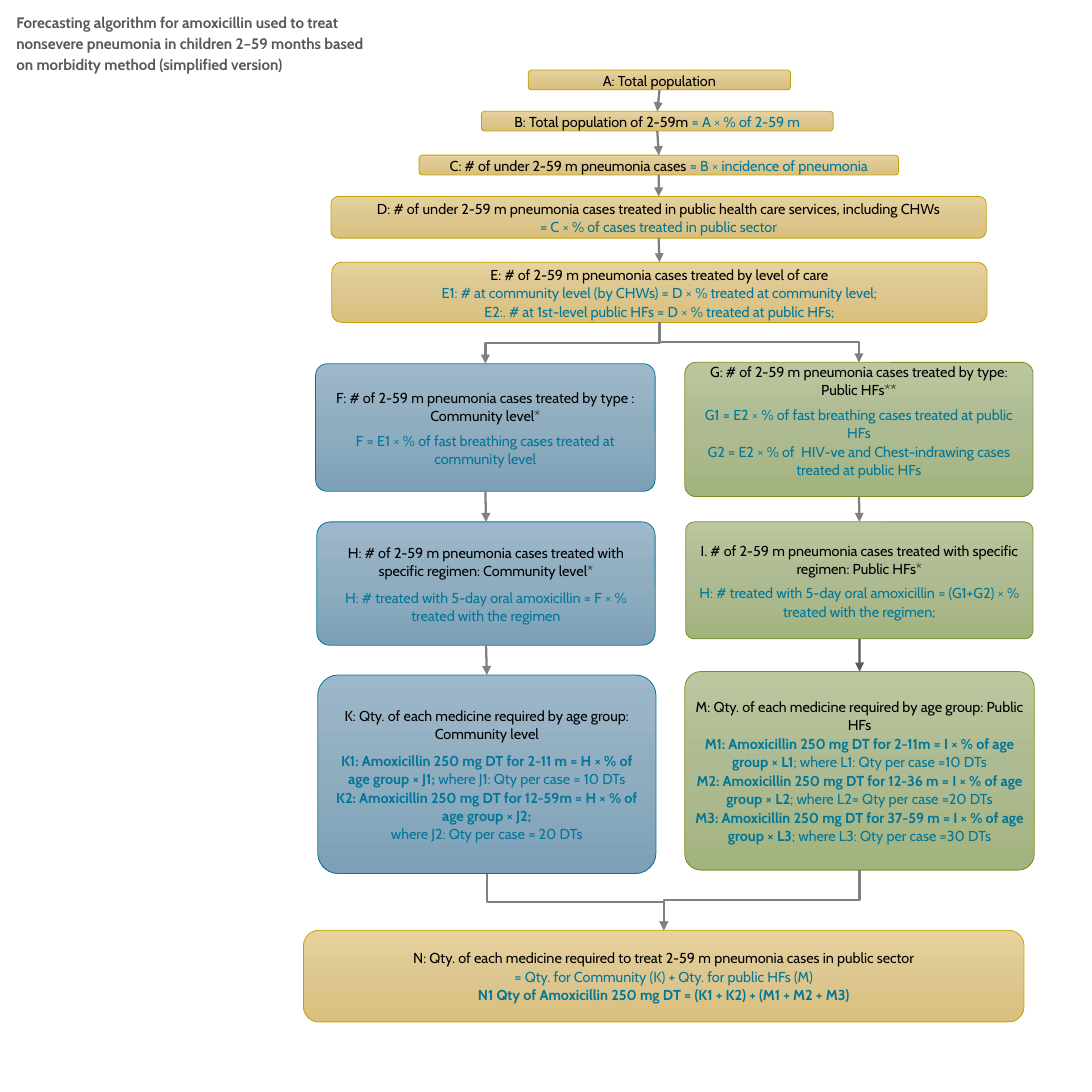
from copy import deepcopy
from lxml.etree import SubElement
from pptx import Presentation
from pptx.dml.color import RGBColor
from pptx.enum.shapes import MSO_CONNECTOR, MSO_SHAPE
from pptx.enum.text import MSO_ANCHOR, PP_ALIGN
from pptx.oxml.ns import qn
from pptx.util import Cm, Pt

# Colours
HEX = {"gold": ("E7D19D", "DDC790", "DAC07C", "C2A204"),
       "blue": ("9DB8CA", "90ADC0", "7CA0B7", "007698"),
       "green": ("BAC69E", "AEBB92", "A3B37D", "788E1E"),
       "head": "000000", "calc": "007698", "bold": "007698",
       "title": "595959", "grey": "808080", "dark": "595959"}

# Formats
FONT = {"name": "Cabin", "size": Pt(9.5)}
FRAME = {"word_wrap": True, "vertical_anchor": MSO_ANCHOR.MIDDLE,
         "margin_left": Cm(0.13), "margin_right": Cm(0.13),
         "margin_top": 0, "margin_bottom": 0}
PARA = {"alignment": PP_ALIGN.CENTER, "line_spacing": 1.07}

TITLE = ("Forecasting algorithm for amoxicillin used to treat nonsevere pneumonia "
         "in children 2–59 months based on morbidity method (simplified version)")

# Boxes: colour, (left, top, width, height) in cm, corner, gap after heading in pt,
# room kept free at the bottom in cm, paragraphs of (style, text) runs
BOXES = {
    "A": ("gold", (12.29, 1.63, 6.1, 0.46), 0.167, 0, 0, [
        [("head", "A: Total population")]]),
    "B": ("gold", (11.2, 2.59, 8.18, 0.46), 0.167, 0, 0, [
        [("head", "B: Total population of 2-59m"), ("calc", " = A × % of 2-59 m")]]),
    "C": ("gold", (9.75, 3.61, 11.15, 0.46), 0.167, 0, 0, [
        [("head", "C: # of under 2-59 m pneumonia cases "),
         ("calc", "= B × incidence of pneumonia")]]),
    "D": ("gold", (7.7, 4.57, 15.24, 0.97), 0.167, 0, 0, [
        [("head", "D: # of under 2-59 m pneumonia cases treated in public "
                  "health care services, including CHWs")],
        [("calc", "= C × % of cases treated in public sector")]]),
    "E": ("gold", (7.72, 6.1, 15.24, 1.4), 0.167, 0, 0, [
        [("head", "E: # of 2-59 m pneumonia cases treated by level of care")],
        [("calc", "E1: # at community level (by CHWs) = D × % treated at community level;")],
        [("calc", "E2:. # at 1st-level public HFs = D × % treated at public HFs;")]]),
    "F": ("blue", (7.34, 8.46, 7.9, 2.97), 0.093, 3.9, 0, [
        [("head", "F: # of 2-59 m pneumonia cases treated by type : Community level*")],
        [("calc", "F = E1 × % of fast breathing cases treated at community level")]]),
    "G": ("green", (15.93, 8.43, 8.1, 3.12), 0.083, 3.9, 0.43, [
        [("head", "G: # of 2-59 m pneumonia cases treated by type: Public HFs**")],
        [("calc", "G1 = E2 × % of fast breathing cases treated at public HFs")],
        [("calc", "G2 = E2 × % of  HIV-ve and Chest-indrawing cases "
                  "treated at public HFs")]]),
    "H": ("blue", (7.37, 12.14, 7.87, 2.87), 0.107, 5.2, 0, [
        [("head", "H: # of 2-59 m pneumonia cases treated with specific regimen: "
                  "Community level*")],
        [("calc", "H: # treated with 5-day oral amoxicillin = F × % "
                  "treated with the regimen")]]),
    "I": ("green", (15.95, 12.14, 8.08, 2.72), 0.072, 3.9, 0, [
        [("head", "I. # of 2-59 m pneumonia cases treated with specific regimen: "
                  "Public HFs*")],
        [("calc", "H: # treated with 5-day oral amoxicillin = (G1+G2) × % "
                  "treated with the regimen;")]]),
    "K": ("blue", (7.39, 15.7, 7.87, 4.62), 0.104, 5.2, 0, [
        [("head", "K: Qty. of each medicine required by age group: Community level")],
        [("bold", "K1: Amoxicillin 250 mg DT for 2-11 m = H × % of age group × J1;"),
         ("calc", " where J1: Qty per case = 10 DTs")],
        [("bold", "K2: Amoxicillin 250 mg DT for 12-59m = H × % of age group × J2;")],
        [("calc", "where J2: Qty per case = 20 DTs")]]),
    "M": ("green", (15.93, 15.62, 8.13, 4.62), 0.082, 0, 0, [
        [("head", "M: Qty. of each medicine required by age group: Public HFs")],
        [("bold", "M1: Amoxicillin 250 mg DT for 2-11m = I × % of age group × L1"),
         ("calc", "; where L1: Qty per case =10 DTs")],
        [("bold", "M2: Amoxicillin 250 mg DT for 12-36 m = I × % of age group × L2"),
         ("calc", "; where L2= Qty per case =20 DTs")],
        [("bold", "M3: Amoxicillin 250 mg DT for 37-59 m = I × % of age group × L3"),
         ("calc", "; where L3: Qty per case =30 DTs")]]),
    "N": ("gold", (7.06, 21.64, 16.76, 2.13), 0.167, 0, 0, [
        [("head", "N: Qty. of each medicine required to treat 2-59 m "
                  "pneumonia cases in public sector")],
        [("calc", "= Qty. for Community (K) + Qty. for public HFs (M)")],
        [("bold", "N1 Qty of Amoxicillin 250 mg DT = (K1 + K2) + (M1 + M2 + M3)")]]),
}
STRAIGHT = ["AB", "BC", "CD", "DE", "FH", "GI", "HK", "IM"]
BENT = ["EF", "EG", "KN", "MN"]


def apply(item, form):
    for name, value in form.items():
        setattr(item, name, value)


def add_run(para, style, text):
    run = para.add_run()
    run.text = text
    apply(run.font, {**FONT, "bold": style in ("bold", "title")})
    run.font.color.rgb = RGBColor.from_string(HEX[style])
    return run


def add_box(shapes, tone, place, corner, gap, room, lines):
    box = shapes.add_shape(MSO_SHAPE.ROUNDED_RECTANGLE, *map(Cm, place))
    box.shadow.inherit = False
    box.adjustments[0] = corner
    # Three-stop gradient, top to bottom
    box.fill.gradient()
    box.fill.gradient_angle = 270
    stops = box._element.spPr.find(".//" + qn("a:gsLst"))
    stops.insert(1, deepcopy(stops[0]))
    *shades, edge = HEX[tone]
    for stop, shade, spot in zip(box.fill.gradient_stops, shades, (0, 0.5, 1)):
        stop.color.rgb = RGBColor.from_string(shade)
        stop.position = spot
    box.line.color.rgb = RGBColor.from_string(edge)
    box.line.width = Pt(0.5)
    # Text
    frame = box.text_frame
    apply(frame, {**FRAME, "margin_bottom": Cm(room)})
    for i, runs in enumerate(lines):
        para = frame.add_paragraph() if i else frame.paragraphs[0]
        apply(para, {**PARA, "space_after": Pt(0 if i else gap)})
        for style, text in runs:
            add_run(para, style, text)
    return box


def add_arrow(shapes, kind, tone):
    arrow = shapes.add_connector(kind, 0, 0, 0, 0)
    arrow.line.color.rgb = RGBColor.from_string(HEX[tone])
    arrow.line.width = Pt(1.5)
    props = arrow._element.spPr
    SubElement(props.find(qn("a:ln")), qn("a:tailEnd"), type="triangle")
    SubElement(props, qn("a:effectLst"))
    return arrow


def add_bend(shapes, start, end):
    # An elbow turned a quarter, so that it leaves and arrives upright
    x1, y1 = start.left + start.width // 2, start.top + start.height
    x2, y2 = end.left + end.width // 2, end.top
    wide, high = y2 - y1, abs(x2 - x1)
    arrow = add_arrow(shapes, MSO_CONNECTOR.ELBOW, "grey")
    apply(arrow, {"left": (x1 + x2 - wide) // 2, "top": (y1 + y2 - high) // 2,
                  "width": wide, "height": high})
    frame = arrow._element.spPr.find(qn("a:xfrm"))
    frame.set("rot", "5400000" if x2 < x1 else "16200000")
    if x2 > x1:
        frame.set("flipH", "1")


def main():
    deck = Presentation()
    deck.slide_width = deck.slide_height = Cm(25.4)
    shapes = deck.slides.add_slide(deck.slide_layouts[6]).shapes

    # Title
    frame = shapes.add_textbox(Cm(0.13), Cm(0.13), Cm(8.86), Cm(1.7)).text_frame
    frame.word_wrap = True
    para = frame.paragraphs[0]
    para.line_spacing = 1.15
    add_run(para, "title", TITLE).font.size = Pt(10)

    # Boxes
    boxes = {key: add_box(shapes, *data) for key, data in BOXES.items()}

    # Arrows
    for start, end in STRAIGHT:
        arrow = add_arrow(shapes, MSO_CONNECTOR.STRAIGHT, "dark" if end == "M" else "grey")
        arrow.begin_connect(boxes[start], 2)
        arrow.end_connect(boxes[end], 0)
    for start, end in BENT:
        add_bend(shapes, boxes[start], boxes[end])

    deck.save("out.pptx")


if __name__ == "__main__":
    main()
